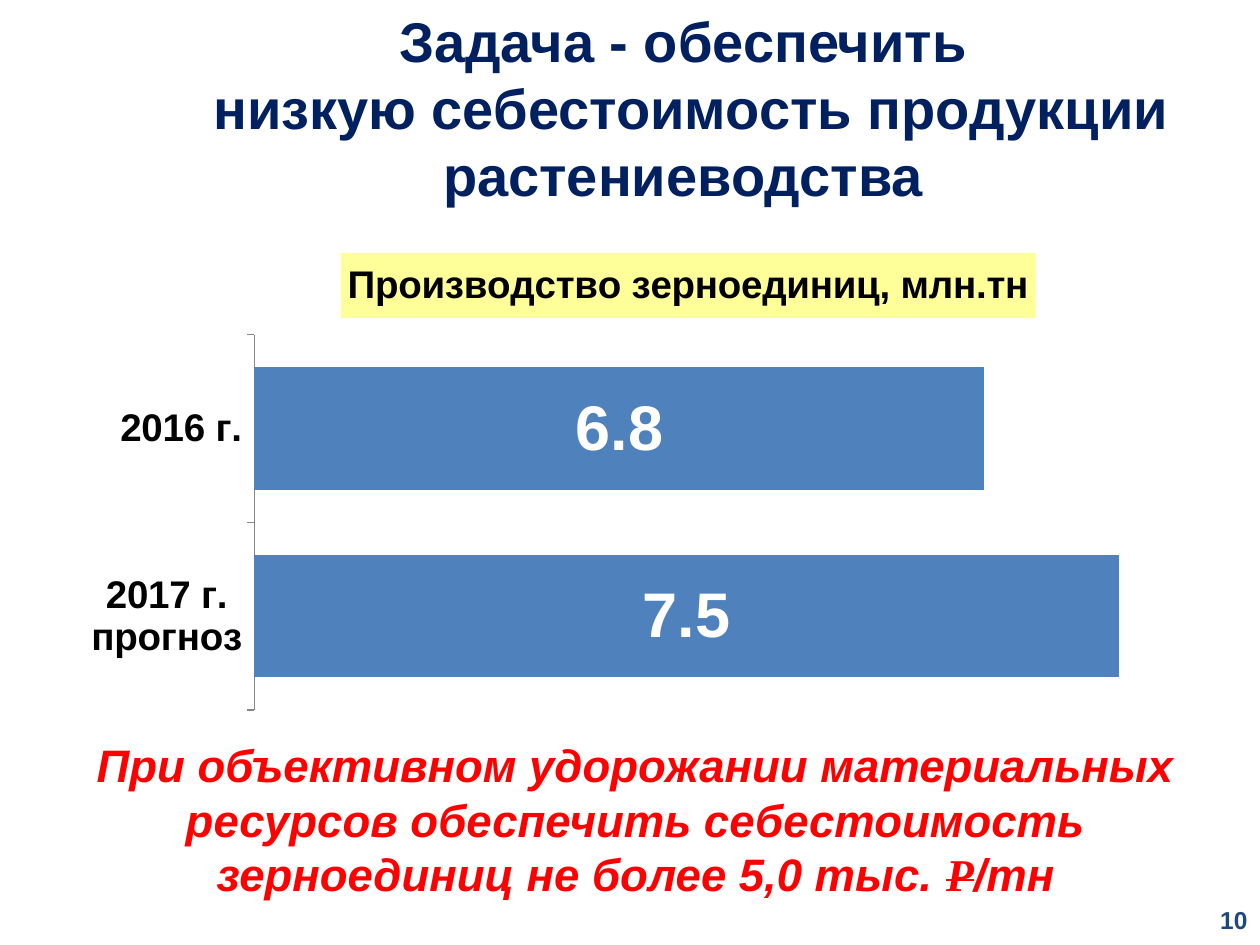
from dataclasses import dataclass

import lxml.etree
import pptx
import pptx.chart.data
import pptx.dml.color
import pptx.enum.chart
import pptx.enum.text
import pptx.oxml
import pptx.oxml.ns
import pptx.util

Pt = pptx.util.Pt
RGBColor = pptx.dml.color.RGBColor
Align = pptx.enum.text.PP_ALIGN
Anchor = pptx.enum.text.MSO_ANCHOR
AutoSize = pptx.enum.text.MSO_AUTO_SIZE
qn = pptx.oxml.ns.qn

NAVY = RGBColor(0x00, 0x20, 0x60)
PAGE_BLUE = RGBColor(0x1F, 0x49, 0x7D)
BAR_BLUE = RGBColor(0x4F, 0x81, 0xBD)
YELLOW = RGBColor(0xFF, 0xFF, 0x99)
RED = RGBColor(0xFF, 0x00, 0x00)
BLACK = RGBColor(0x00, 0x00, 0x00)
WHITE = RGBColor(0xFF, 0xFF, 0xFF)
AXIS_GRAY = RGBColor(0x86, 0x86, 0x86)


@dataclass(frozen=True)
class Box:
    left: float
    top: float
    width: float
    height: float

    def lengths(self) -> tuple:
        return tuple(Pt(v) for v in (self.left, self.top, self.width, self.height))


@dataclass(frozen=True)
class Piece:
    text: str
    font: str = "Arial"
    strike: bool = False


@dataclass(frozen=True)
class Harvest:
    year: str
    output: float


def style_font(font, size: float, color: RGBColor, name: str = "Arial",
               bold: bool = True, italic: bool = False) -> None:
    font.size = Pt(size)
    font.name = name
    font.bold = bold
    font.italic = italic
    font.color.rgb = color


def add_text(slide, box: Box, lines: list[list[Piece]], *, size: float,
             color: RGBColor, italic: bool = False, align=Align.CENTER,
             anchor=Anchor.TOP, grow: bool = True) -> None:
    frame = slide.shapes.add_textbox(*box.lengths()).text_frame
    frame.word_wrap = True
    frame.vertical_anchor = anchor
    frame.auto_size = AutoSize.SHAPE_TO_FIT_TEXT if grow else AutoSize.NONE
    paragraph = frame.paragraphs[0]
    paragraph.alignment = align
    for number, pieces in enumerate(lines):
        if number:
            paragraph.add_line_break()
        for piece in pieces:
            run = paragraph.add_run()
            run.text = piece.text
            style_font(run.font, size, color, piece.font, italic=italic)
            if piece.strike:
                run._r.get_or_add_rPr().set("strike", "sngStrike")


def set_layout(parent, position: int, **values) -> None:
    for old in parent.findall(qn("c:layout")):
        parent.remove(old)
    layout = pptx.oxml.parse_xml(f"<c:layout {pptx.oxml.ns.nsdecls('c')}/>")
    manual = lxml.etree.SubElement(layout, qn("c:manualLayout"))
    for tag, value in values.items():
        lxml.etree.SubElement(manual, qn(f"c:{tag}")).set("val", str(value))
    parent.insert(position, layout)


def add_harvest_chart(slide, box: Box, harvests: list[Harvest]) -> None:
    data = pptx.chart.data.CategoryChartData()
    data.categories = [harvest.year for harvest in harvests]
    data.add_series("Series 1", [harvest.output for harvest in harvests])
    chart = slide.shapes.add_chart(
        pptx.enum.chart.XL_CHART_TYPE.BAR_STACKED, *box.lengths(), data).chart
    style_font(chart.font, 18, BLACK, "Calibri", bold=False)
    chart.has_legend = False

    chart.has_title = True
    heading = chart.chart_title
    heading.text_frame.text = "Производство зерноединиц, млн.тн"
    style_font(heading.text_frame.paragraphs[0].runs[0].font, 22, BLACK)
    heading.format.fill.solid()
    heading.format.fill.fore_color.rgb = YELLOW
    set_layout(heading._element, 1, xMode="edge", yMode="edge", x=0.276, y=0.058)

    years = chart.category_axis
    style_font(years.tick_labels.font, 22, BLACK)
    years.major_tick_mark = pptx.enum.chart.XL_TICK_MARK.OUTSIDE
    years.format.line.color.rgb = AXIS_GRAY
    years.has_major_gridlines = False

    outputs = chart.value_axis
    outputs.minimum_scale = 3
    outputs.maximum_scale = 8
    outputs.has_major_gridlines = False
    outputs.visible = False

    bars = chart.plots[0]
    bars.gap_width = 53
    bars.overlap = 100
    bars.vary_by_categories = False
    fill = bars.series[0].format.fill
    fill.solid()
    fill.fore_color.rgb = BAR_BLUE
    labels = bars.series[0].data_labels
    labels.show_value = True
    style_font(labels.font, 36, WHITE)
    plot_area = chart._chartSpace.find(".//" + qn("c:plotArea"))
    set_layout(plot_area, 0, layoutTarget="inner", xMode="edge", yMode="edge",
               x=0.206, y=0.204, w=0.778, h=0.671)


def main() -> None:
    deck = pptx.Presentation()
    deck.slide_width, deck.slide_height = Pt(720), Pt(540)
    slide = deck.slides.add_slide(deck.slide_layouts[6])

    add_text(slide, Box(552.24, 511.2, 167.76, 28.8), [[Piece("10")]], size=14,
             color=PAGE_BLUE, align=Align.RIGHT, anchor=Anchor.MIDDLE, grow=False)
    add_text(slide, Box(69.84, 0, 650.16, 123.84),
             [[Piece("Задача - обеспечить ")],
              [Piece("низкую себестоимость продукции растениеводства ")]],
             size=32, color=NAVY)
    add_harvest_chart(slide, Box(0, 126, 705.6, 319.68),
                      [Harvest("2017 г. прогноз", 7.5), Harvest("2016 г.", 6.8)])
    add_text(slide, Box(20.16, 417.6, 686.16, 101.52),
             [[Piece("При объективном удорожании материальных ресурсов "
                     "обеспечить себестоимость зерноединиц не более 5,0 тыс. "),
               Piece("Р", font="Times New Roman", strike=True),
               Piece("/тн")]],
             size=26, color=RED, italic=True)

    deck.save("out.pptx")


if __name__ == "__main__":
    main()
